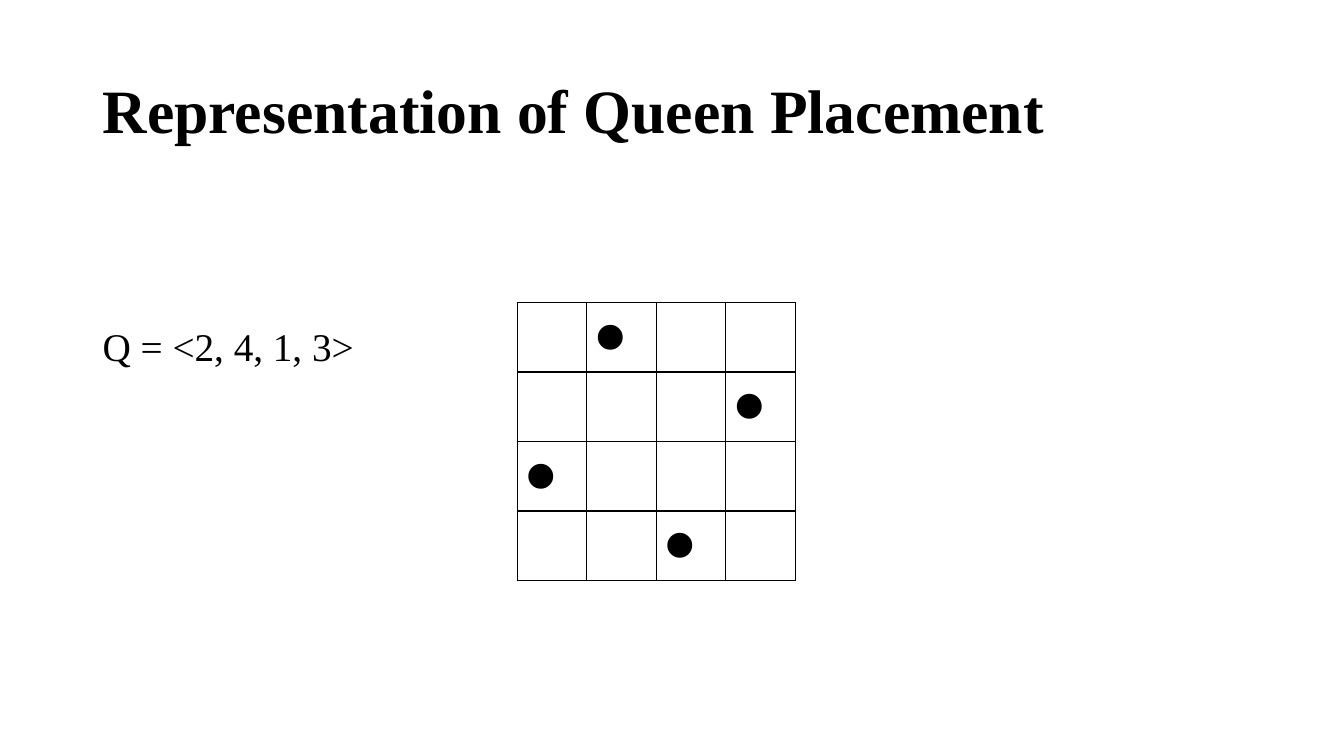
from dataclasses import dataclass

from lxml import etree
from pptx import Presentation
from pptx.dml.color import RGBColor
from pptx.enum.text import MSO_ANCHOR
from pptx.oxml.ns import qn
from pptx.slide import Slide
from pptx.table import _Cell
from pptx.text.text import TextFrame
from pptx.util import Inches, Pt

TOP, MIDDLE = MSO_ANCHOR.TOP, MSO_ANCHOR.MIDDLE


@dataclass(frozen=True)
class Theme:
    ink: str = "000000"
    serif: str = "Times New Roman"
    sans: str = "Calibri"
    title_size: int = 44
    body_size: int = 28
    queen_size: int = 32
    grid_width: int = 1


@dataclass(frozen=True)
class Label:
    text: str
    top: float
    height: float
    size: int
    bold: bool
    anchor: MSO_ANCHOR


THEME = Theme()
QUEENS = (2, 4, 1, 3)  # column of the queen in each row
LEFT, WIDTH = 0.92, 11.5
BOARD_LEFT, BOARD_TOP, SQUARE = 5.13, 3.0, 0.69
LABELS = (
    Label("Representation of Queen Placement", 0.4, 1.45, THEME.title_size, True, MIDDLE),
    Label(f"Q = <{', '.join(map(str, QUEENS))}>", 3.2, 0.6, THEME.body_size, False, TOP),
)


def write(tf: TextFrame, text: str, *, size: int, font: str,
          bold: bool = False, spacing: float = 1.0) -> None:
    p = tf.paragraphs[0]
    p.line_spacing = spacing
    r = p.add_run()
    r.text = text
    r.font.size, r.font.name, r.font.bold = Pt(size), font, bold
    r.font.color.rgb = RGBColor.from_string(THEME.ink)


def add_label(s: Slide, label: Label) -> None:
    box = s.shapes.add_textbox(Inches(LEFT), Inches(label.top),
                               Inches(WIDTH), Inches(label.height))
    tf = box.text_frame
    tf.word_wrap = True
    tf.vertical_anchor = label.anchor
    write(tf, label.text, size=label.size, font=THEME.serif,
          bold=label.bold, spacing=0.9)


def outline(cell: _Cell) -> None:
    """Leave the cell unfilled and rule its four sides."""
    cell.fill.background()
    props = cell._tc.get_or_add_tcPr()
    for i, side in enumerate(("lnL", "lnR", "lnT", "lnB")):
        line = etree.Element(qn(f"a:{side}"), w=str(Pt(THEME.grid_width)))
        fill = etree.SubElement(line, qn("a:solidFill"))
        etree.SubElement(fill, qn("a:srgbClr"), val=THEME.ink)
        props.insert(i, line)


def add_board(s: Slide) -> None:
    n = len(QUEENS)
    side = Inches(SQUARE * n)
    table = s.shapes.add_table(n, n, Inches(BOARD_LEFT), Inches(BOARD_TOP),
                               side, side).table
    table.first_row = table.horz_banding = False
    for cell in table.iter_cells():
        outline(cell)
    for row, column in enumerate(QUEENS):
        write(table.cell(row, column - 1).text_frame, "⚫",
              size=THEME.queen_size, font=THEME.sans)


def main() -> None:
    prs = Presentation()
    prs.slide_width, prs.slide_height = Inches(13.33), Inches(7.5)
    s = prs.slides.add_slide(prs.slide_layouts[6])
    for label in LABELS:
        add_label(s, label)
    add_board(s)
    prs.save("out.pptx")


if __name__ == "__main__":
    main()
